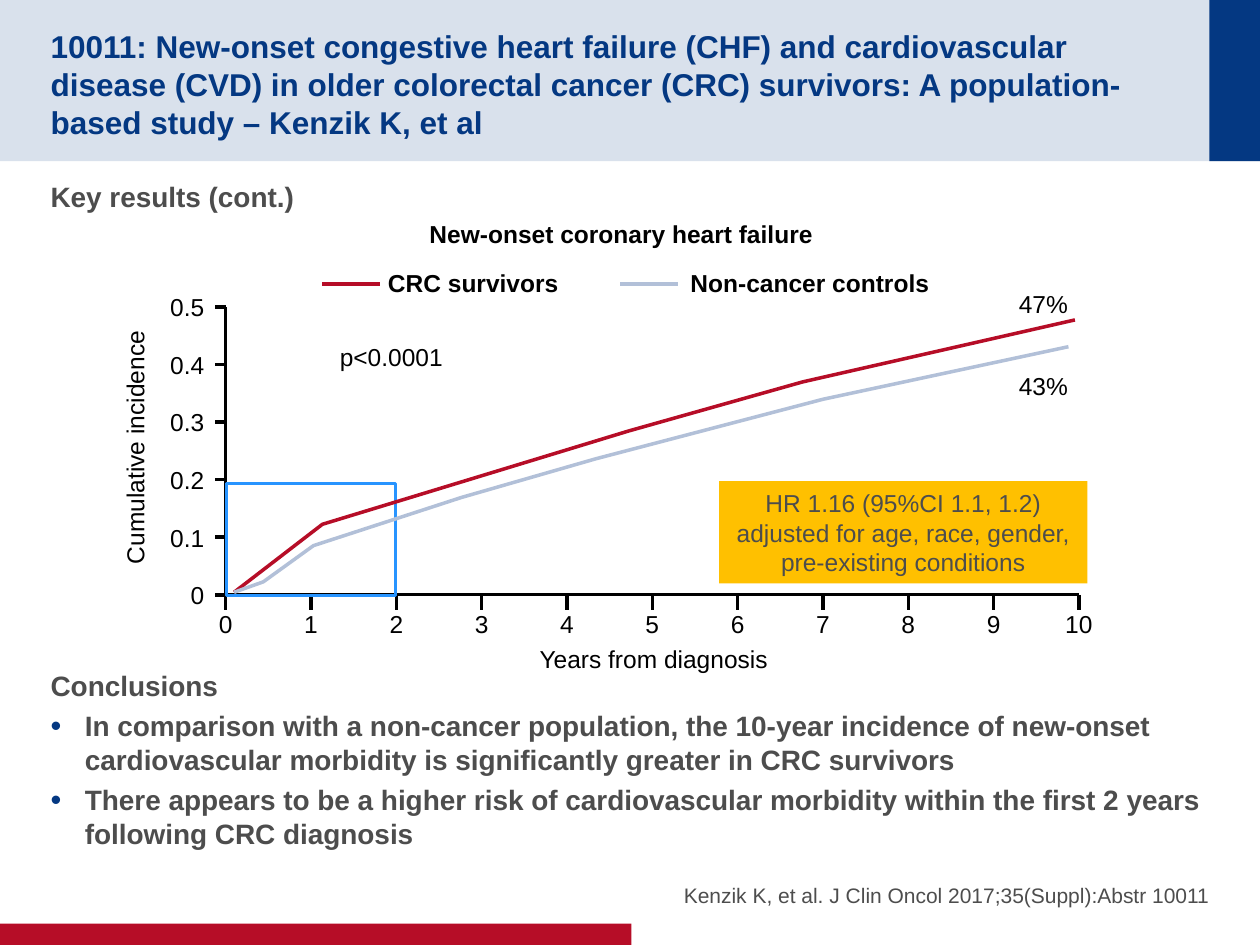
from lxml import etree
from pptx import Presentation
from pptx import util as u
from pptx.dml.color import RGBColor
from pptx.enum import shapes, text
from pptx.oxml.ns import qn

NAVY, RED, PALE = "043882", "B60D27", "B2C0D8"
GREY, BLACK, AMBER, SKY = "4D4D4D", "000000", "FFC000", "2894FF"
LEFT, CENTER, RIGHT = text.PP_ALIGN.LEFT, text.PP_ALIGN.CENTER, text.PP_ALIGN.RIGHT
TOP, MIDDLE, BOTTOM = text.MSO_ANCHOR.TOP, text.MSO_ANCHOR.MIDDLE, text.MSO_ANCHOR.BOTTOM
INSETS = (0.25, 0.13, 0.25, 0.13)


def rgb(hex_color):
    return RGBColor.from_string(hex_color)


def add_xml(parent, tag, **attrs):
    return etree.SubElement(parent, qn(tag), attrs)


class SlideBuilder:
    """Holds the style and the current slide."""
    font = "Arial"
    label_size = 14
    line_width = 2

    def __init__(self, prs):
        self.slide = prs.slides.add_slide(prs.slide_layouts[3])

    def place(self, sp, x, y, w, h):
        sp.left, sp.top, sp.width, sp.height = (u.Cm(v) for v in (x, y, w, h))
        return sp

    def frame(self, sp, anchor=TOP, insets=INSETS):
        tf = sp.text_frame
        tf.word_wrap = True
        tf.auto_size = text.MSO_AUTO_SIZE.NONE
        tf.vertical_anchor = anchor
        tf.margin_left, tf.margin_top, tf.margin_right, tf.margin_bottom = (
            u.Cm(v) for v in insets)
        return tf

    def add_text(self, tf, paragraphs, size, color, bold=False, align=LEFT, after=0):
        """Fill the frame; a newline inside a paragraph becomes a line break."""
        for i, content in enumerate(paragraphs):
            p = tf.paragraphs[0] if i == 0 else tf.add_paragraph()
            p.alignment = align
            p.space_before, p.space_after = u.Pt(0), u.Pt(after)
            for j, line in enumerate(content.split("\n")):
                if j:
                    p.add_line_break()
                r = p.add_run()
                r.text = line
                r.font.name, r.font.size, r.font.bold = self.font, u.Pt(size), bold
                r.font.color.rgb = rgb(color)

    def placeholder(self, idx, box, paragraphs, size, color, bold=False, align=LEFT,
                    anchor=TOP, insets=(0, 0.13, 0, 0.13), after=4, bullets_from=None):
        sp = self.place(self.slide.placeholders[idx], *box)
        tf = self.frame(sp, anchor, insets)
        self.add_text(tf, paragraphs, size, color, bold, align, after)
        for i, p in enumerate(tf.paragraphs):
            self.bullet(p, bullets_from is not None and i >= bullets_from)

    def bullet(self, p, shown):
        pPr = p._p.get_or_add_pPr()
        indent = u.Cm(0.69) if shown else 0
        pPr.set("marL", str(int(indent)))
        pPr.set("indent", str(-int(indent)))
        if shown:
            add_xml(add_xml(pPr, "a:buClr"), "a:srgbClr", val=NAVY)
            add_xml(pPr, "a:buSzPct", val="110000")
            add_xml(pPr, "a:buFont", typeface=self.font)
            add_xml(pPr, "a:buChar", char="•")
        else:
            add_xml(pPr, "a:buNone")

    def label(self, content, x, y, w, h=0.86, size=None, color=BLACK, bold=False,
              align=LEFT, anchor=TOP, insets=INSETS, rotation=0):
        sp = self.slide.shapes.add_textbox(*(u.Cm(v) for v in (x, y, w, h)))
        sp.rotation = rotation
        self.add_text(self.frame(sp, anchor, insets), [content],
                      size or self.label_size, color, bold, align)

    def rect(self, x, y, w, h, fill=None, line=None, opacity=None):
        sp = self.slide.shapes.add_shape(
            shapes.MSO_SHAPE.RECTANGLE, *(u.Cm(v) for v in (x, y, w, h)))
        self.paint(sp, fill, line)
        if opacity:
            color = sp._element.spPr.find(".//" + qn("a:srgbClr"))
            add_xml(color, "a:alpha", val=str(opacity * 1000))
        return sp

    def paint(self, sp, fill, line):
        sp.shadow.inherit = False
        if fill:
            sp.fill.solid()
            sp.fill.fore_color.rgb = rgb(fill)
        else:
            sp.fill.background()
        if line:
            sp.line.color.rgb = rgb(line)
            sp.line.width = u.Pt(self.line_width)
        else:
            sp.line.fill.background()

    def line(self, x1, y1, x2, y2, color=BLACK):
        s = self.slide.shapes.add_connector(
            shapes.MSO_CONNECTOR.STRAIGHT, *(u.Cm(v) for v in (x1, y1, x2, y2)))
        s.line.color.rgb = rgb(color)
        s.line.width = u.Pt(self.line_width)
        add_xml(s._element.spPr, "a:effectLst")

    def polyline(self, points, color):
        start, *rest = [(u.Cm(x), u.Cm(y)) for x, y in points]
        builder = self.slide.shapes.build_freeform(*start)
        builder.add_line_segments(rest, close=False)
        self.paint(builder.convert_to_shape(), None, color)


def draw_axes(s):
    x0, y0, x_step, y_step = 4.55, 11.99, 1.72, 1.16
    s.polyline([(x0, y0 - 5 * y_step), (x0, y0), (x0 + 10 * x_step, y0)], BLACK)
    for i in range(6):
        y = y0 - i * y_step
        s.line(4.34, y, x0, y)
        s.label(f"{i / 10:g}", 2.8, y - 0.43, 1.57, align=RIGHT, anchor=MIDDLE)
    for year in range(11):
        x = x0 + year * x_step
        s.line(x, y0, x, y0 + 0.3)
        s.label(str(year), x - 0.6, 12.14, 1.2, align=CENTER)
    s.label("Cumulative incidence", -0.1, 8.59, 5.63, align=CENTER, rotation=270)
    s.label("Years from diagnosis", 10.38, 12.85, 5.6, align=CENTER)


def draw_results(s):
    s.label("New-onset coronary heart failure", 2.44, 4.29, 20.17, bold=True, align=CENTER)
    draw_axes(s)
    for name, color, line_x, text_x in (("CRC survivors", RED, 6.5, 7.57),
                                        ("Non-cancer controls", PALE, 12.5, 13.67)):
        s.line(line_x, 5.73, line_x + 1.16, 5.73, color)
        s.label(name, text_x, 5.28, 5.6, bold=True)
    for content, x, y in (("p<0.0001", 6.6, 6.76), ("47%", 20.29, 5.69),
                          ("43%", 20.29, 7.34)):
        s.label(content, x, y, 2.8)

    hazard = s.rect(14.5, 9.7, 7.42, 2.06, fill=AMBER)
    s.add_text(s.frame(hazard, MIDDLE),
               ["HR 1.16 (95%CI 1.1, 1.2)",
                "adjusted for age, race, gender,\npre-existing conditions"],
               s.label_size, GREY, align=CENTER)
    s.rect(4.57, 9.75, 3.4, 2.26, line=SKY)

    s.polyline([(21.67, 6.45), (16.18, 7.7), (12.67, 8.69), (6.5, 10.57),
                (4.72, 11.94)], RED)
    s.polyline([(21.54, 6.99), (16.59, 8.05), (12.01, 9.25), (9.3, 10.03),
                (6.32, 11), (5.31, 11.73), (4.72, 11.94)], PALE)


def main():
    prs = Presentation()
    prs.slide_width, prs.slide_height = u.Cm(25.4), u.Cm(19.05)
    s = SlideBuilder(prs)

    s.rect(0, 0, 25.4, 3.25, fill=NAVY, opacity=15)
    s.rect(24.38, 0, 1.02, 3.25, fill=NAVY)
    s.rect(0, 18.62, 12.73, 0.43, fill=RED)

    s.placeholder(0, (1.02, 0.51, 22.89, 2.24),
                  ["10011: New-onset congestive heart failure (CHF) and cardiovascular "
                   "disease (CVD) in older colorectal cancer (CRC) survivors: "
                   "A population-based study – Kenzik K, et al"],
                  18, NAVY, bold=True, anchor=MIDDLE, insets=(0, 0.13, 0, 0), after=0)
    s.placeholder(1, (1.02, 13.34, 23.37, 4.34),
                  ["Conclusions",
                   "In comparison with a non-cancer population, the 10-year incidence of "
                   "new-onset cardiovascular morbidity is significantly greater in CRC survivors",
                   "There appears to be a higher risk of cardiovascular morbidity within "
                   "the first 2 years following CRC diagnosis"],
                  16, GREY, bold=True, bullets_from=1)
    s.placeholder(2, (12.5, 16.94, 11.89, 1.35),
                  ["Kenzik K, et al. J Clin Oncol 2017;35(Suppl):Abstr 10011"],
                  12, GREY, align=RIGHT, anchor=BOTTOM, insets=(0, 0, 0, 0))
    s.label("Key results (cont.)", 1.02, 3.48, 23.37, 1.4, size=16, color=GREY,
            bold=True, insets=(0, 0.13, 0, 0.13))
    draw_results(s)
    prs.save("out.pptx")


if __name__ == "__main__":
    main()
